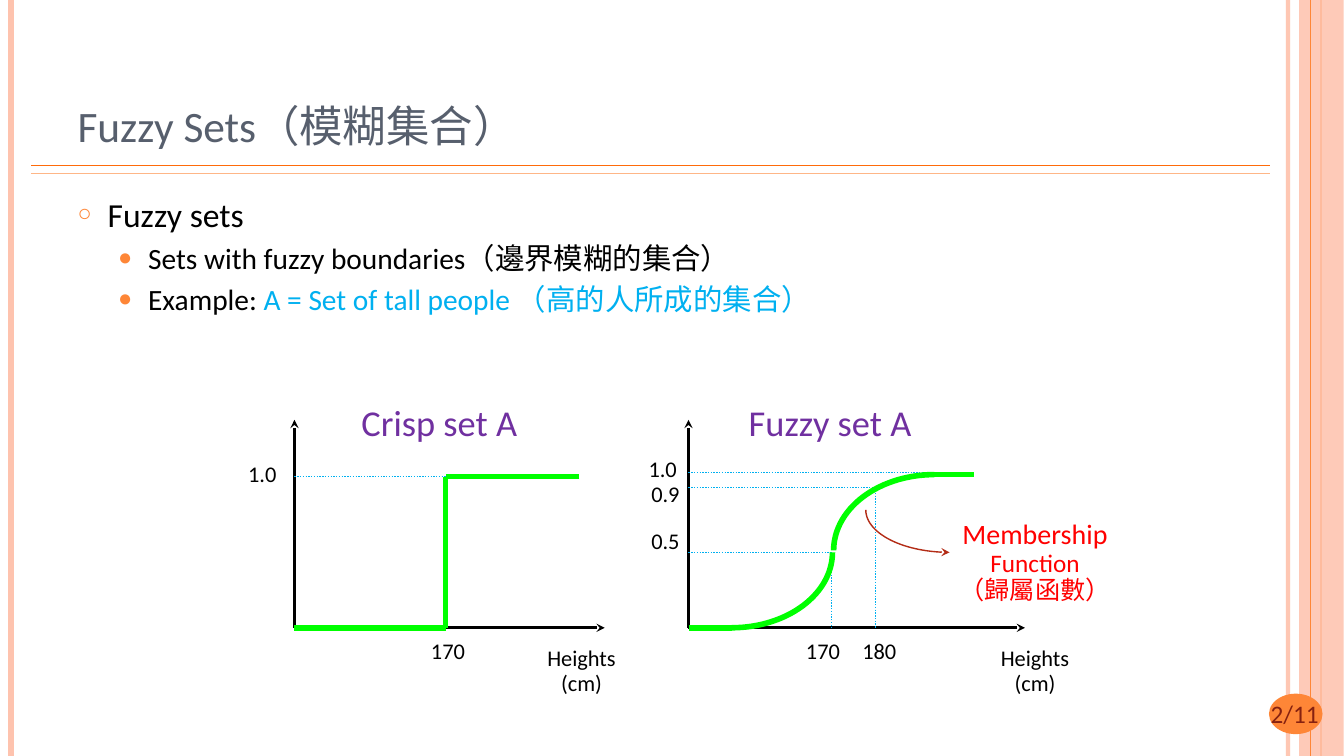
import math

import pptx
import pptx.dml.color
import pptx.enum.dml
import pptx.enum.shapes
import pptx.enum.text
import pptx.oxml.ns
import pptx.util
from lxml import etree

Cm, Pt = pptx.util.Cm, pptx.util.Pt
RGBColor = pptx.dml.color.RGBColor
MSO_SHAPE = pptx.enum.shapes.MSO_SHAPE
PP_ALIGN = pptx.enum.text.PP_ALIGN
MSO_ANCHOR = pptx.enum.text.MSO_ANCHOR
qn = pptx.oxml.ns.qn

BLACK = RGBColor(0x00, 0x00, 0x00)
SLATE = RGBColor(0x57, 0x5F, 0x6D)
PEACH = RGBColor(0xFE, 0xC3, 0xAE)
ORANGE = RGBColor(0xFE, 0x86, 0x37)
DEEP_ORANGE = RGBColor(0xFF, 0x6B, 0x0A)
PALE_ORANGE = RGBColor(0xFE, 0xB6, 0x87)
MAROON = RGBColor(0x86, 0x21, 0x10)
BRICK = RGBColor(0xB3, 0x2C, 0x16)
SKY = RGBColor(0x00, 0xB0, 0xF0)
GREEN = RGBColor(0x00, 0xFF, 0x00)
PURPLE = RGBColor(0x70, 0x30, 0xA0)
RED = RGBColor(0xFF, 0x00, 0x00)


class Deck:
    font = "Calibri"
    cjk_font = "Noto Sans CJK SC"

    def __init__(self, width, height):
        self.prs = pptx.Presentation()
        self.prs.slide_width, self.prs.slide_height = Cm(width), Cm(height)
        self.s = self.prs.slides.add_slide(self.prs.slide_layouts[1])

    def place(self, sp, left, top, width, height):
        sp.left, sp.top = Cm(left), Cm(top)
        sp.width, sp.height = Cm(width), Cm(height)

    def run(self, p, text, size, color):
        r = p.add_run()
        r.text = text
        r.font.size = Pt(size)
        r.font.color.rgb = color
        r.font.name = self.font
        etree.SubElement(r.font._element, qn("a:ea"), typeface=self.cjk_font)

    def title(self, text, box):
        sp = self.s.shapes.title
        self.place(sp, *box)
        tf = sp.text_frame
        tf.auto_size = pptx.enum.text.MSO_AUTO_SIZE.NONE
        tf.vertical_anchor = MSO_ANCHOR.BOTTOM
        p = tf.paragraphs[0]
        p.alignment = PP_ALIGN.LEFT
        self.run(p, text, 31, SLATE)

    def bullets(self, items, box):
        """Each item: level, size, list of (text, colour)."""
        sp = self.s.placeholders[1]
        self.place(sp, *box)
        tf = sp.text_frame
        tf.auto_size = pptx.enum.text.MSO_AUTO_SIZE.NONE
        for i, (level, size, runs) in enumerate(items):
            p = tf.paragraphs[0] if i == 0 else tf.add_paragraph()
            p.level = level
            pPr = p._p.get_or_add_pPr()
            pPr.set("marL", str(Cm((0.76, 1.78)[level])))
            pPr.set("indent", str(-Cm(0.76)))
            clr = etree.SubElement(pPr, qn("a:buClr"))
            etree.SubElement(clr, qn("a:srgbClr"), val=str(ORANGE))
            etree.SubElement(pPr, qn("a:buSzPct"), val=("70000", "80000")[level])
            etree.SubElement(pPr, qn("a:buChar"), char="○●"[level])
            p.space_before = Pt(0.2 * size if i else 0)
            for text, color in runs:
                self.run(p, text, size, color)

    def label(self, lines, box, color=BLACK, size=16, spacing=0.65, align=PP_ALIGN.CENTER):
        """Lines are texts, or (text, size) pairs."""
        tf = self.s.shapes.add_textbox(*map(Cm, box)).text_frame
        tf.word_wrap = False
        for i, line in enumerate(lines):
            text, pt = line if isinstance(line, tuple) else (line, size)
            p = tf.paragraphs[0] if i == 0 else tf.add_paragraph()
            p.alignment = align
            p.line_spacing = spacing
            p.space_before = Pt(0.3 * pt if i else 0)
            self.run(p, text, pt, color)

    def shape(self, kind, box, color):
        sp = self.s.shapes.add_shape(kind, *map(Cm, box))
        sp.shadow.inherit = False
        sp.fill.solid()
        sp.fill.fore_color.rgb = color
        sp.line.fill.background()
        return sp

    def opacity(self, sp, percent):
        clr = sp._element.spPr.find(".//" + qn("a:srgbClr"))
        etree.SubElement(clr, qn("a:alpha"), val=str(percent * 1000))

    def arrowhead(self, sp, end):
        ln = sp._element.spPr.find(qn("a:ln"))
        etree.SubElement(ln, qn("a:" + end), type="stealth")

    def line(self, x1, y1, x2, y2, color, width, dotted=False, arrow=False):
        c = self.s.shapes.add_connector(
            pptx.enum.shapes.MSO_CONNECTOR.STRAIGHT, Cm(x1), Cm(y1), Cm(x2), Cm(y2))
        c.line.color.rgb = color
        c.line.width = Pt(width)
        if dotted:
            c.line.dash_style = pptx.enum.dml.MSO_LINE.ROUND_DOT
        if arrow:
            self.arrowhead(c, "tailEnd")
        etree.SubElement(c._element.spPr, qn("a:effectLst"))
        return c

    def quarter_arc(self, cx, cy, rx, ry, start, color, width, steps=30):
        """Quarter ellipse through 90 degrees from start, clockwise from the right."""
        angles = [math.radians(start + 90 * i / steps) for i in range(steps + 1)]
        points = [(Cm(cx + rx * math.cos(a)), Cm(cy + ry * math.sin(a))) for a in angles]
        fb = self.s.shapes.build_freeform(*points[0])
        fb.add_line_segments(points[1:], close=False)
        sp = fb.convert_to_shape()
        sp.shadow.inherit = False
        sp.fill.background()
        sp.line.color.rgb = color
        sp.line.width = Pt(width)
        return sp


def main():
    deck = Deck(33.87, 19.05)

    # Side bands, title rules and page number
    deck.opacity(deck.line(32.46, 0, 32.46, 19.05, PEACH, 3), 93)
    deck.line(0.28, 0, 0.28, 19.05, PEACH, 4.5)
    deck.line(33.3, 0, 33.3, 19.05, ORANGE, 1.5)
    deck.opacity(deck.shape(MSO_SHAPE.RECTANGLE, (32.74, 0, 1.12, 19.05), PEACH), 87)
    deck.line(33.02, 0, 33.02, 19.05, ORANGE, 0.75)
    for y, color in ((4.17, DEEP_ORANGE), (4.37, PALE_ORANGE)):
        deck.line(0.79, y, 32, y, color, 1)
    deck.shape(MSO_SHAPE.OVAL, (31.98, 17.48, 1.35, 1.02), ORANGE)
    deck.label(["2/11"], (31.09, 17.48, 3.07, 1.02), MAROON, 18, 1)

    # Title and list
    deck.title("Fuzzy Sets（模糊集合）", (1.7, 0.76, 27.66, 3.18))
    deck.bullets([
        (0, 24, [("Fuzzy sets", BLACK)]),
        (1, 21, [("Sets with fuzzy boundaries（邊界模糊的集合）", BLACK)]),
        (1, 21, [("Example: ", BLACK), ("A = Set of tall people （高的人所成的集合）", SKY)]),
    ], (1.7, 4.75, 27.66, 13.23))

    # Axes, headings and axis titles of both graphs
    base = 15.82
    for x0, x_end, heading, heading_x, unit_x in (
            (7.42, 15.24, "Crisp set A", 8.86, 13.51),
            (17.35, 25.83, "Fuzzy set A", 18.62, 24.94)):
        deck.line(x0, base, x_end, base, BLACK, 2, arrow=True)
        deck.line(x0, base, x0, 10.58, BLACK, 2, arrow=True)
        deck.label([heading], (heading_x, 10.03, 4.65, 1.32), PURPLE, 26, 0.95, PP_ALIGN.LEFT)
        deck.label(["Heights", "(cm)"], (unit_x, 16.33, 2.29, 1.4))

    # Guide lines
    for guide in ((7.42, 12.01, 11.23, 12.01),
                  (20.96, 13.92, 20.96, base), (17.35, 13.92, 20.96, 13.92),
                  (17.35, 12.29, 22.23, 12.29), (22.07, 12.42, 22.07, base),
                  (17.35, 11.91, 23.93, 11.91)):
        deck.line(*guide, SKY, 1, dotted=True)

    # Axis values
    for text, x, y in (("170", 10.59, 16.13), ("170", 20.04, 16.13), ("180", 21.46, 16.13),
                       ("1.0", 5.99, 11.68), ("1.0", 16.08, 11.56),
                       ("0.9", 16.15, 12.19), ("0.5", 16.15, 13.36)):
        deck.label([text], (x, y, 1.4 if len(text) == 3 and "." not in text else 1.24, 0.74))

    # Crisp step and fuzzy S-curve
    for part in ((11.23, base, 11.23, 12.01), (14.6, 12.01, 11.23, 12.01),
                 (11.23, base, 7.42, base),
                 (17.37, base, 18.44, base), (24.54, 11.96, 23.47, 11.96)):
        deck.line(*part, GREEN, 4)
    deck.quarter_arc(18.44, 13.92, 2.54, 1.9, 0, GREEN, 4)
    deck.quarter_arc(23.55, 13.87, 2.54, 1.91, 180, GREEN, 4)

    # Membership function callout
    pointer = deck.quarter_arc(23.93, 12.85, 2.11, 1.07, 90, BRICK, 1)
    deck.arrowhead(pointer, "headEnd")
    deck.label([("Membership", 20), ("Function", 18), ("（歸屬函數）", 18)],
               (23.9, 13.16, 4.37, 2.31), RED)

    deck.prs.save("out.pptx")


if __name__ == "__main__":
    main()
